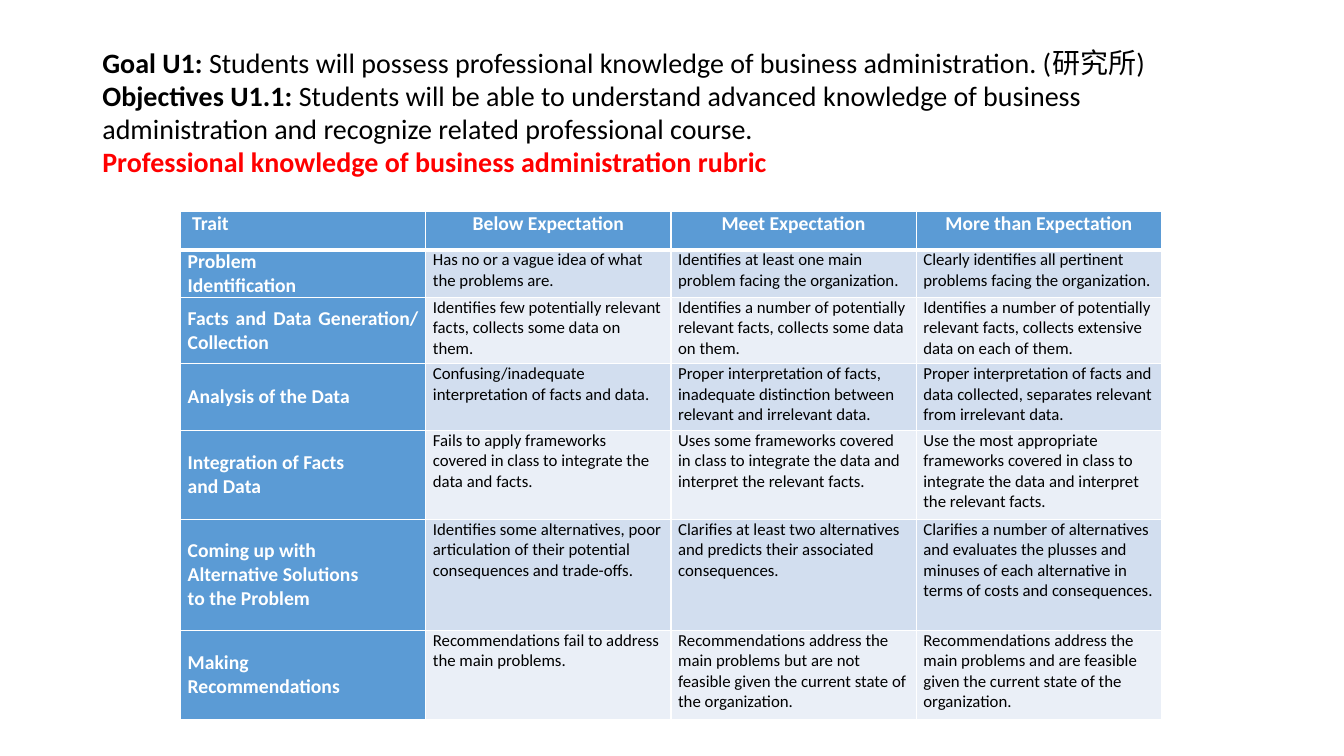
import pptx
import pptx.dml.color
import pptx.enum.text
import pptx.oxml
import pptx.oxml.ns
import pptx.util
from pptx.util import Cm, Pt

FONT = "Calibri"
BLACK, WHITE, RED = "000000", "FFFFFF", "FF0000"
BLUE, BAND_DARK, BAND_LIGHT = "5B9BD5", "D2DEEF", "EAEFF7"

# Each heading span: text, bold, colour; a vertical tab breaks the line.
HEADING = [
    ("Goal U1: ", True, BLACK),
    ("Students will possess professional knowledge of business administration. (研究所)\v", False, BLACK),
    ("Objectives U1.1: ", True, BLACK),
    ("Students will be able to understand advanced knowledge of business "
     "administration and recognize related professional course.\v", False, BLACK),
    ("Professional knowledge of business administration rubric", True, RED),
]

RUBRIC = [
    (" Trait", "Below Expectation", "Meet Expectation", "More than Expectation"),
    ("Problem\nIdentification",
     "Has no or a vague idea of what the problems are.",
     "Identifies at least one main problem facing the organization.",
     "Clearly identifies all pertinent problems facing the organization."),
    ("Facts and Data Generation/ Collection",
     "Identifies few potentially relevant facts, collects some data on them.",
     "Identifies a number of potentially relevant facts, collects some data on them.",
     "Identifies a number of potentially relevant facts, collects extensive data on each of them."),
    ("Analysis of the Data",
     "Confusing/inadequate interpretation of facts and data.",
     "Proper interpretation of facts, inadequate distinction between relevant and irrelevant data.",
     "Proper interpretation of facts and data collected, separates relevant from irrelevant data."),
    ("Integration of Facts\nand Data",
     "Fails to apply frameworks covered in class to integrate the data and facts.",
     "Uses some frameworks covered in class to integrate the data and interpret the relevant facts.",
     "Use the most appropriate frameworks covered in class to integrate the data "
     "and interpret the relevant facts."),
    ("Coming up with\nAlternative Solutions\nto the Problem",
     "Identifies some alternatives, poor articulation of their potential consequences and trade-offs.",
     "Clarifies at least two alternatives and predicts their associated consequences.",
     "Clarifies a number of alternatives and evaluates the plusses and minuses "
     "of each alternative in terms of costs and consequences."),
    ("Making\nRecommendations",
     "Recommendations fail to address the main problems.",
     "Recommendations address the main problems but are not feasible given "
     "the current state of the organization.",
     "Recommendations address the main problems and are feasible given "
     "the current state of the organization."),
]
ROW_HEIGHTS = [0.97, 1.18, 1.68, 1.68, 2.24, 2.8, 2.24]
COLUMN_WIDTH = 6.18


def rgb(colour):
    return pptx.dml.color.RGBColor.from_string(colour)


def set_font(font, size, bold, colour):
    font.name = FONT
    font.size = Pt(size)
    font.bold = bold
    font.color.rgb = rgb(colour)


def set_borders(cell, widths):
    """Draw white cell borders; widths maps an edge letter to points."""
    properties = cell._tc.get_or_add_tcPr()
    for index, edge in enumerate("LRTB"):
        line = pptx.oxml.parse_xml(
            f'<a:ln{edge} {pptx.oxml.ns.nsdecls("a")} w="{Pt(widths.get(edge, 1))}">'
            f'<a:solidFill><a:srgbClr val="{WHITE}"/></a:solidFill></a:ln{edge}>')
        properties.insert(index, line)


def add_heading(page):
    box = page.shapes.add_textbox(Cm(2.33), Cm(1.01), Cm(29.21), Cm(3.68))
    frame = box.text_frame
    frame.word_wrap = True
    frame.vertical_anchor = pptx.enum.text.MSO_ANCHOR.MIDDLE
    para = frame.paragraphs[0]
    para.line_spacing = 0.98
    for text, bold, colour in HEADING:
        # Line breaks are added as their own elements between spans.
        span = para.add_run()
        span.text = text.rstrip("\v")
        set_font(span.font, 20, bold, colour)
        if text.endswith("\v"):
            para.add_line_break()


def fill_cell(cell, text, row, column):
    align = pptx.enum.text.PP_ALIGN
    header, trait = row == 0, column == 0
    strong = header or trait
    cell.text = text
    cell.margin_left = cell.margin_right = Cm(0.18)
    cell.margin_top = cell.margin_bottom = 0
    if trait and not header:
        cell.vertical_anchor = pptx.enum.text.MSO_ANCHOR.MIDDLE
        alignment = align.JUSTIFY
    else:
        alignment = align.CENTER if header and not trait else align.LEFT
    for para in cell.text_frame.paragraphs:
        para.alignment = alignment
        set_font(para.font, 14 if strong else 12, strong, WHITE if strong else BLACK)
    cell.fill.solid()
    band = BAND_DARK if row % 2 else BAND_LIGHT
    cell.fill.fore_color.rgb = rgb(BLUE if strong else band)
    set_borders(cell, {0: {"B": 3}, 1: {"T": 3}}.get(row, {}))


def add_rubric(page):
    columns = len(RUBRIC[0])
    table = page.shapes.add_table(
        len(RUBRIC), columns, Cm(4.55), Cm(5.33),
        Cm(COLUMN_WIDTH * columns), Cm(sum(ROW_HEIGHTS))).table
    for column in table.columns:
        column.width = Cm(COLUMN_WIDTH)
    for row, (height, texts) in enumerate(zip(ROW_HEIGHTS, RUBRIC)):
        table.rows[row].height = Cm(height)
        for column, text in enumerate(texts):
            fill_cell(table.cell(row, column), text, row, column)


def main():
    deck = pptx.Presentation()
    deck.slide_width, deck.slide_height = Cm(33.87), Cm(19.05)
    page = deck.slides.add_slide(deck.slide_layouts[6])
    add_heading(page)
    add_rubric(page)
    deck.save("out.pptx")


if __name__ == "__main__":
    main()
